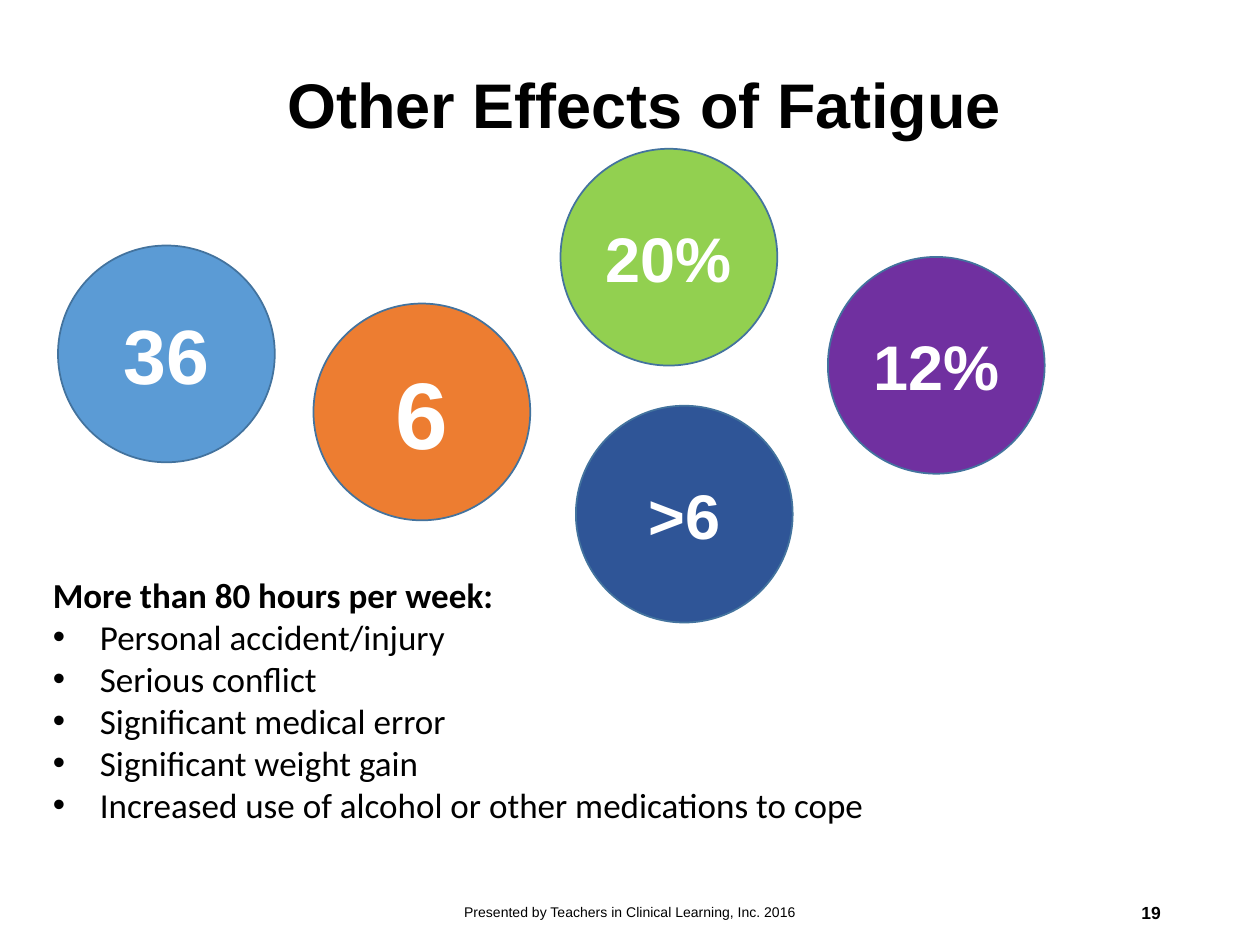
from typing import NamedTuple

from lxml import etree
from pptx import Presentation
from pptx import util as u
from pptx.dml.color import RGBColor
from pptx.enum import shapes, text
from pptx.oxml.ns import qn


class Disc(NamedTuple):
    label: str
    left: float
    top: float
    fill: str
    size: int = 36


DISC_SIZE = 4.37
EDGE = "43739E"
DISCS = [
    Disc("36", 1.17, 4.95, "5B9BD5", 44),
    Disc("6", 6.32, 6.12, "ED7D31", 54),
    Disc("20%", 11.3, 3, "92D050"),
    Disc("12%", 16.69, 5.18, "7030A0"),
    Disc(">6", 11.61, 8.18, "2F5597"),
]
HEAD = "More than 80 hours per week:"
RISKS = [
    "Personal accident/injury",
    "Serious conflict",
    "Significant medical error",
    "Significant weight gain",
    "Increased use of alcohol or other medications to cope",
]


def paint(target, color: str) -> None:
    """Give a colour format its hex colour."""
    target.rgb = RGBColor.from_string(color)


def style(para, size: float, color: str = "000000", face: str = "Arial",
          bold: bool = False, align=text.PP_ALIGN.LEFT) -> None:
    para.alignment = align
    form = {"size": u.Pt(size), "name": face, "bold": bold}
    for key, val in form.items():
        setattr(para.font, key, val)
    paint(para.font.color, color)


def place(shape, left: float, top: float, width: float, height: float) -> None:
    spots = {"left": left, "top": top, "width": width, "height": height}
    for key, val in spots.items():
        setattr(shape, key, u.Cm(val))


def draw_disc(slide, disc: Disc) -> None:
    side = u.Cm(DISC_SIZE)
    oval = slide.shapes.add_shape(shapes.MSO_SHAPE.OVAL, u.Cm(disc.left),
                                  u.Cm(disc.top), side, side)
    oval.shadow.inherit = False
    oval.fill.solid()
    paint(oval.fill.fore_color, disc.fill)
    paint(oval.line.color, EDGE)
    oval.line.width = u.Pt(1)
    frame = oval.text_frame
    frame.text = disc.label
    frame.vertical_anchor = text.MSO_ANCHOR.MIDDLE
    style(frame.paragraphs[0], disc.size, "FFFFFF", bold=True,
          align=text.PP_ALIGN.CENTER)


def draw_note(slide, words: str, left: float, width: float, **form) -> None:
    box = slide.shapes.add_textbox(u.Cm(left), u.Cm(17.88), u.Cm(width), u.Cm(1.02))
    frame = box.text_frame
    frame.word_wrap = True
    frame.vertical_anchor = text.MSO_ANCHOR.MIDDLE
    frame.text = words
    style(frame.paragraphs[0], **form)


def fill_list(body) -> None:
    frame = body.text_frame
    frame.text = "\n".join([HEAD, *RISKS])
    frame.auto_size = text.MSO_AUTO_SIZE.NONE
    for num, para in enumerate(frame.paragraphs):
        head = num == 0
        hang = 0 if head else u.Cm(0.95)
        props = para._p.get_or_add_pPr()
        props.set("marL", str(hang))
        props.set("indent", str(-hang))
        if head:
            etree.SubElement(props, qn("a:buNone"))
        else:
            etree.SubElement(props, qn("a:buFont"), typeface="Arial")
            etree.SubElement(props, qn("a:buChar"), char="•")
        para.space_before = u.Pt(0)
        style(para, 20, face="Calibri", bold=head)


def main() -> None:
    deck = Presentation()
    deck.slide_width, deck.slide_height = u.Cm(25.4), u.Cm(19.05)
    slide = deck.slides.add_slide(deck.slide_layouts[1])

    # Title
    title = slide.shapes.title
    place(title, 5.54, 0.33, 18.14, 3.68)
    title.text_frame.text = "Other Effects of Fatigue"
    title.text_frame.vertical_anchor = text.MSO_ANCHOR.MIDDLE
    title.text_frame.auto_size = text.MSO_AUTO_SIZE.NONE
    line = title.text_frame.paragraphs[0]
    line.line_spacing = 0.9
    style(line, 36, bold=True)

    # List of risks
    body = slide.placeholders[1]
    place(body, 0.81, 11.43, 19.74, 5.38)
    fill_list(body)

    # Figures
    for disc in DISCS:
        draw_disc(slide, disc)

    # Footer and page number
    draw_note(slide, "Presented by Teachers in Clinical Learning, Inc. 2016",
              8.41, 8.59, size=8, align=text.PP_ALIGN.CENTER)
    draw_note(slide, "19", 17.93, 5.72, size=10, bold=True,
              align=text.PP_ALIGN.RIGHT)

    deck.save("out.pptx")


if __name__ == "__main__":
    main()
